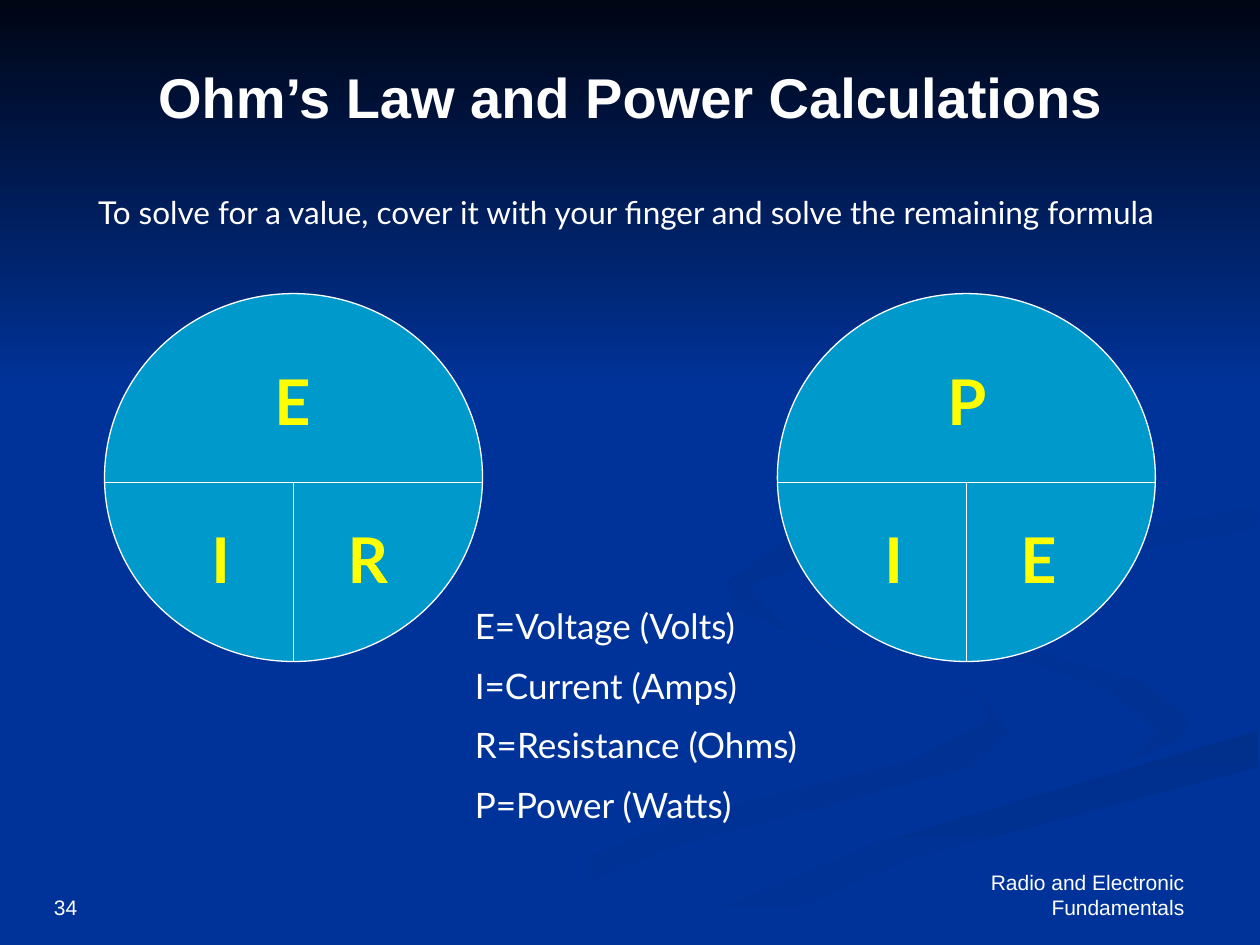
import pptx
import pptx.util
import pptx.dml.color
import pptx.enum.shapes
import pptx.enum.text
import lxml.etree

WIDTH, HEIGHT = 10, 7.5
NAVY, WHITE, YELLOW, TEAL = "003399", "FFFFFF", "FFFF00", "0099CC"
ALIGN = pptx.enum.text.PP_ALIGN
ANCHOR = pptx.enum.text.MSO_ANCHOR

TITLE = "Ohm’s Law and Power Calculations"
HINT = "To solve for a value, cover it with your finger and solve the remaining formula"
LEGEND = ["E=Voltage (Volts)", "I=Current (Amps)", "R=Resistance (Ohms)", "P=Power (Watts)"]
FOOTER, NUMBER = "Radio and Electronic Fundamentals", "34"

# Wheels: left edge, then the letters on top, bottom left and bottom right
WHEELS = [(0.83, "EIR"), (6.17, "PIE")]
WHEEL_TOP, WHEEL_W, WHEEL_H = 2.33, 3, 2.92
LETTER_BOXES = [(1.25, 0.5, 0.5), (0.75, 1.75, 0.5), (1.83, 1.75, 0.58)]  # dx, dy, width

# Ribbons: first colour, last colour, gradient angle, outline in inches
RIBBONS = [
    (NAVY, "003193", 0, [
        (7.8, 5.53), (6.4, 5.07), (5.75, 4.6), (5.8, 4.84), (7.76, 5.53), (7.85, 5.7),
        (7.27, 6.02), (5.4, 6.49), (3, 7.49), (3.6, 7.49), (5.3, 6.74), (7.7, 6.09),
        (8, 5.8)]),
    (NAVY, "003193", 45, [
        (9.43, 5.7), (9.05, 5.4), (7.58, 4.98), (7.24, 4.64), (7.46, 5), (8.8, 5.49),
        (9.18, 5.8), (8.94, 6.05), (9.37, 5.86)]),
    ("002F8C", NAVY, 90, [
        (5.03, 7.49), (5.7, 7.49), (7.2, 6.82), (9.98, 6.09), (9.98, 5.8), (6.96, 6.69)]),
    ("003091", NAVY, 45, [
        (7.8, 4.6), (8.26, 4.96), (8.06, 4.7), (8.6, 4.43), (9.98, 4.2), (9.98, 4.02),
        (8.35, 4.3)]),
    ("002F8E", NAVY, 45, [
        (6.83, 4.3), (8.4, 3.96), (8.93, 3.4), (8.5, 2.8), (7.62, 2.33), (8.62, 2.92),
        (8.88, 3.4), (8.4, 3.78), (6.25, 4.26), (5.77, 4.62), (6.22, 5), (5.94, 4.65)]),
    ("000514", NAVY, 90, [(0, 0), (0, 3.08), (WIDTH, 3.08), (WIDTH, 0)]),
]


def inch(*values):
    return [pptx.util.Inches(v) for v in values]


def color(hex_string):
    return pptx.dml.color.RGBColor.from_string(hex_string)


def add_ribbon(slide, first, last, angle, points):
    start, *rest = [inch(*point) for point in points]
    builder = slide.shapes.build_freeform(*start)
    builder.add_line_segments(rest, close=True)
    sp = builder.convert_to_shape()
    sp.shadow.inherit = False
    sp.line.fill.background()
    sp.fill.gradient()
    sp.fill.gradient_angle = -angle % 360  # python-pptx counts counter-clockwise
    for stop, shade in zip(sp.fill.gradient_stops, (first, last)):
        stop.color.rgb = color(shade)


def write(sp, lines, size, font, shade=WHITE, bold=False, align=ALIGN.LEFT,
          anchor=ANCHOR.TOP, gap=0):
    tf = sp.text_frame
    tf.word_wrap = True
    tf.vertical_anchor = anchor
    for i, line in enumerate(lines):
        p = tf.paragraphs[0] if i == 0 else tf.add_paragraph()
        p.alignment = align
        p.space_before = pptx.util.Pt(gap)
        r = p.add_run()
        r.text = line
        r.font.size = pptx.util.Pt(size)
        r.font.name = font
        r.font.bold = bold
        r.font.color.rgb = color(shade)


def add_text(slide, box, lines, size, font, **style):
    write(slide.shapes.add_textbox(*inch(*box)), lines, size, font, **style)


def outline(sp):
    sp.line.color.rgb = color(WHITE)
    sp.line.width = pptx.util.Pt(0.75)


def add_line(slide, *ends):
    line = slide.shapes.add_connector(pptx.enum.shapes.MSO_CONNECTOR.STRAIGHT, *inch(*ends))
    outline(line)
    lxml.etree.SubElement(line._element.spPr, pptx.oxml.ns.qn("a:effectLst"))


def add_wheel(slide, left, letters):
    sp = slide.shapes.add_shape(pptx.enum.shapes.MSO_SHAPE.OVAL,
                                *inch(left, WHEEL_TOP, WHEEL_W, WHEEL_H))
    sp.shadow.inherit = False
    sp.fill.solid()
    sp.fill.fore_color.rgb = color(TEAL)
    outline(sp)
    middle, split = left + WHEEL_W / 2, WHEEL_TOP + WHEEL_W / 2
    add_line(slide, left, split, left + WHEEL_W, split)
    add_line(slide, middle, WHEEL_TOP + WHEEL_H, middle, split)
    for letter, (dx, dy, width) in zip(letters, LETTER_BOXES):
        add_text(slide, (left + dx, WHEEL_TOP + dy, width, 0.7), [letter], 36, "Lato",
                 shade=YELLOW, bold=True, gap=18)


def main():
    prs = pptx.Presentation()
    prs.slide_width, prs.slide_height = inch(WIDTH, HEIGHT)
    slide = prs.slides.add_slide(prs.slide_layouts[5])
    slide.background.fill.solid()
    slide.background.fill.fore_color.rgb = color(NAVY)

    for ribbon in RIBBONS:
        add_ribbon(slide, *ribbon)

    title = slide.shapes.title
    slide.shapes._spTree.append(title._element)  # bring in front of the ribbons
    title.left, title.top, title.width, title.height = inch(0.17, 0, 9.67, 1.52)
    write(title, [TITLE], 32, "Arial", bold=True, align=ALIGN.CENTER, anchor=ANCHOR.MIDDLE)

    add_text(slide, (7.17, 6.83, 2.33, 0.52), [FOOTER], 12, "Arial",
             align=ALIGN.RIGHT, anchor=ANCHOR.BOTTOM)
    add_text(slide, (0.33, 6.83, 6.25, 0.52), [NUMBER], 12, "Arial", anchor=ANCHOR.BOTTOM)
    for left, letters in WHEELS:
        add_wheel(slide, left, letters)
    add_text(slide, (3.67, 4.75, 3, 1.93), LEGEND, 20, "Lato", gap=10)
    add_text(slide, (0.44, 1.48, 9.06, 0.4), [HINT], 18, "Lato", align=ALIGN.CENTER, gap=9)
    prs.save("out.pptx")


if __name__ == "__main__":
    main()
